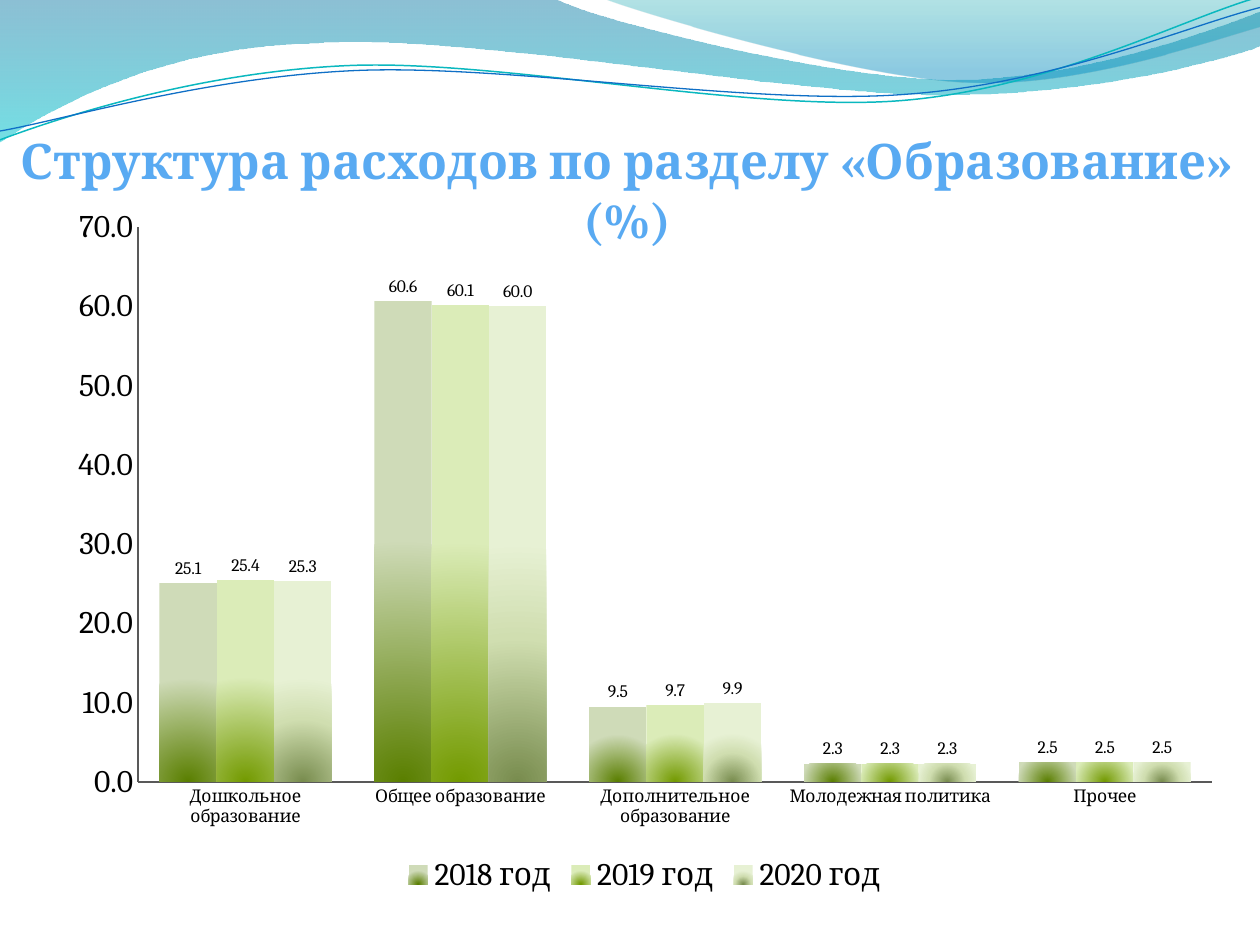
from math import cos, radians, sin

from lxml import etree
from pptx import Presentation
from pptx.chart.data import CategoryChartData
from pptx.dml.color import RGBColor
from pptx.enum.chart import XL_CHART_TYPE as ChartType
from pptx.enum.chart import XL_LABEL_POSITION as LabelPosition
from pptx.enum.chart import XL_LEGEND_POSITION as LegendPosition
from pptx.enum.chart import XL_TICK_MARK as TickMark
from pptx.enum.text import MSO_AUTO_SIZE as AutoSize
from pptx.enum.text import PP_ALIGN as Align
from pptx.oxml import parse_xml
from pptx.oxml.ns import nsdecls, qn
from pptx.util import Inches, Pt

FONT = "Cambria"
LINE_TILT = 2.7
LINEAR_DOWN = '<a:lin ang="5400000" scaled="1"/>'
RADIAL_FROM_BASE = '<a:path path="circle"><a:fillToRect l="50000" t="100000" r="50000"/></a:path>'

WAVE_FILLS = [
    ([[(0, 0)], [(4.4, -0.01)],
      [(4.76, 0.17), (6.64, 0.63), (7.58, 0.63)],
      [(8.53, 0.63), (9.58, 0.26), (10, 0.09)],
      [(10.01, 0.36)],
      [(9.83, 0.44), (8.7, 0.76), (7.46, 0.75)],
      [(6.22, 0.75), (3.82, 0.28), (2.57, 0.34)],
      [(1.29, 0.36), (0.46, 0.83), (-0.01, 1.13)],
      [(0, 0)]],
     [(0, "0074A1", 45), (100, "00C6CF", 55)]),
    ([[(4.79, -0.01)],
      [(5.09, 0.11), (6.82, 0.62), (7.69, 0.65)],
      [(8.56, 0.69), (9.61, 0.32), (10, 0.21)],
      [(10, 0)], [(4.79, -0.01)]],
     [(0, "00A1A9", 30), (80, "008BBF", 45)]),
]
WAVE_LINES = [
    ([[(0, 1.11)],
      [(0.48, 0.93), (1.58, 0.57), (2.77, 0.52)],
      [(3.95, 0.47), (5.93, 0.89), (7.13, 0.8)],
      [(8.33, 0.71), (9.38, 0.15), (9.98, -0.02)]], (4.99, 0.58), "0AB8BF", 0.85),
    ([[(0, 1.04)],
      [(0.47, 0.96), (1.64, 0.61), (2.83, 0.56)],
      [(4.03, 0.51), (5.97, 0.84), (7.17, 0.75)],
      [(8.36, 0.67), (9.41, 0.21), (10, 0.06)]], (5, 0.59), "0F6FC6", 0.75),
]
CATEGORIES = ["Дошкольное образование", "Общее образование", "Дополнительное образование",
              "Молодежная политика", "Прочее"]
YEARS = [
    ("2018 год", [25.1, 60.6, 9.5, 2.3, 2.5], [(0, "5A7F00", 100), (100, "CFDBB8", 100)]),
    ("2019 год", [25.4, 60.1, 9.7, 2.3, 2.5], [(0, "739A00", 100), (100, "DBECB8", 100)]),
    ("2020 год", [25.3, 60, 9.9, 2.3, 2.5],
     [(0, "788C4E", 100), (60, "D0DEB0", 100), (100, "E7F1D4", 100)]),
]


def color(hex_code):
    """Turn a hex string into a colour."""
    return RGBColor.from_string(hex_code)


def set_gradient(fill, properties, stops, direction):
    """Give shape properties a gradient of (percent, colour, opacity) stops."""
    fill.background()
    stop_xml = "".join(
        f'<a:gs pos="{percent * 1000}"><a:srgbClr val="{hex_code}">'
        f'<a:alpha val="{opacity * 1000}"/></a:srgbClr></a:gs>'
        for percent, hex_code, opacity in stops)
    gradient = parse_xml(f'<a:gradFill {nsdecls("a")} rotWithShape="1">'
                         f'<a:gsLst>{stop_xml}</a:gsLst>{direction}</a:gradFill>')
    properties.replace(properties.find(qn("a:noFill")), gradient)


def turn(point, pivot, degrees):
    """Turn a point clockwise around a pivot."""
    angle = radians(degrees)
    across, down = point[0] - pivot[0], point[1] - pivot[1]
    return (pivot[0] + across * cos(angle) - down * sin(angle),
            pivot[1] + across * sin(angle) + down * cos(angle))


def add_outline(page, left, top, segments, closed):
    """Draw a freeform whose three-point segments are cubic curves."""
    places = [(left + Inches(x), top + Inches(y)) for segment in segments for x, y in segment]
    builder = page.shapes.build_freeform(*places[0])
    builder.add_line_segments(places[1:], close=closed)
    outline = builder.convert_to_shape()
    outline.shadow.inherit = False
    steps = iter(list(outline._element.iter(qn("a:lnTo"))))
    for segment in segments[1:]:
        first, *others = [next(steps) for _ in segment]
        if others:
            first.tag = qn("a:cubicBezTo")
            for step in others:
                first.append(step[0])
                step.getparent().remove(step)
    return outline


def add_waves(page, left, top):
    """Draw the translucent waves and the two tilted lines across the header."""
    for segments, stops in WAVE_FILLS:
        wave = add_outline(page, left, top, segments, True)
        wave.line.fill.background()
        set_gradient(wave.fill, wave._element.spPr, stops, LINEAR_DOWN)
    for segments, pivot, hex_code, width in WAVE_LINES:
        level = [[turn(point, pivot, LINE_TILT) for point in segment] for segment in segments]
        line = add_outline(page, left, top, level, False)
        line.rotation = 360 - LINE_TILT
        line.fill.background()
        line.line.color.rgb = color(hex_code)
        line.line.width = Pt(width)


def set_plot_layout(chart, **fractions):
    """Fix the inner plot area as fractions of the chart box."""
    plot_area = chart._chartSpace.chart.plotArea
    for layout in plot_area.findall(qn("c:layout")):
        plot_area.remove(layout)
    layout = parse_xml(f'<c:layout {nsdecls("c")}><c:manualLayout/></c:layout>')
    settings = {"layoutTarget": "inner", "xMode": "edge", "yMode": "edge", **fractions}
    for name, value in settings.items():
        etree.SubElement(layout[0], qn(f"c:{name}")).set("val", str(value))
    plot_area.insert(0, layout)


def style_axes(chart):
    """Set the scale, lines and labels of both axes."""
    for axis in (chart.category_axis, chart.value_axis):
        axis.major_tick_mark = axis.minor_tick_mark = TickMark.NONE
        axis.has_major_gridlines = False
        axis.format.line.color.rgb = color("595959")
        axis.format.line.width = Pt(0.75)
    chart.category_axis.tick_labels.font.size = Pt(10)
    scale = chart.value_axis
    scale.minimum_scale, scale.maximum_scale, scale.major_unit = 0, 70, 10
    scale.tick_labels.number_format = "0.0"
    scale.tick_labels.number_format_is_linked = False


def add_spending_chart(page, left, top, width, height):
    """Place the column chart of spending shares by year."""
    data = CategoryChartData(number_format="0.0")
    data.categories = CATEGORIES
    for name, values, _ in YEARS:
        data.add_series(name, values)
    chart = page.shapes.add_chart(ChartType.COLUMN_CLUSTERED, left, top, width, height, data).chart
    chart.font.name, chart.font.size = FONT, Pt(18)
    chart.font.color.rgb = color("000000")
    chart.has_title = False
    chart.has_legend = True
    chart.legend.position = LegendPosition.BOTTOM
    chart.legend.include_in_layout = False
    set_plot_layout(chart, x=0.071, y=0.045, w=0.91, h=0.788)
    style_axes(chart)
    plot = chart.plots[0]
    plot.gap_width, plot.overlap, plot.vary_by_categories = 75, 0, False
    for series, (_, _, stops) in zip(plot.series, YEARS):
        set_gradient(series.format.fill, series._element.find(qn("c:spPr")), stops, RADIAL_FROM_BASE)
        labels = series.data_labels
        labels.show_value = True
        labels.position = LabelPosition.OUTSIDE_END
        labels.number_format, labels.number_format_is_linked = "0.0", False
        labels.font.name, labels.font.size = FONT, Pt(10)


def add_title(page, left, top, width, height):
    """Place the centred slide title."""
    box = page.shapes.add_textbox(left, top, width, height)
    box.text_frame.word_wrap = False
    box.text_frame.auto_size = AutoSize.SHAPE_TO_FIT_TEXT
    para = box.text_frame.paragraphs[0]
    para.text = "Структура расходов по разделу «Образование» (%)"
    para.alignment = Align.CENTER
    para.font.name, para.font.size, para.font.bold = FONT, Pt(28), True
    para.font.color.rgb = color("59AAF2")


def main():
    """Build and save the slide."""
    deck = Presentation()
    deck.slide_width, deck.slide_height = Inches(10), Inches(7.5)
    page = deck.slides.add_slide(deck.slide_layouts[6])
    add_waves(page, Inches(0), Inches(0))
    add_spending_chart(page, Inches(0.43), Inches(1.55), Inches(9.37), Inches(5.59))
    add_title(page, Inches(0), Inches(0.99), Inches(9.95), Inches(0.57))
    deck.save("out.pptx")


if __name__ == "__main__":
    main()
